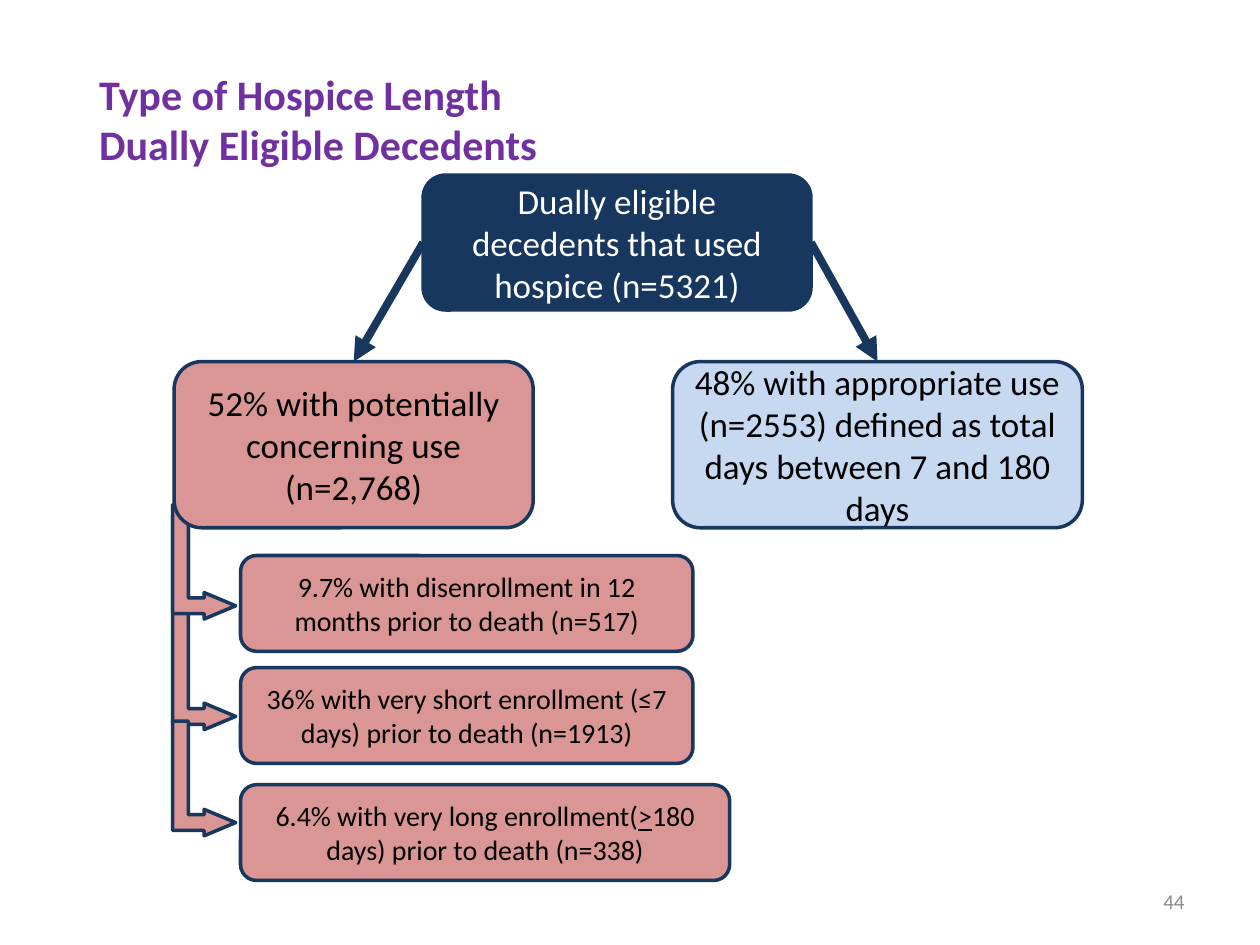
from lxml.etree import SubElement
from pptx import Presentation
from pptx.dml.color import RGBColor
from pptx.enum.shapes import MSO_CONNECTOR as Connector, MSO_SHAPE as Shape
from pptx.enum.text import MSO_ANCHOR as Anchor, PP_ALIGN as Align
from pptx.oxml.ns import qn
from pptx.util import Cm, Pt

NAVY = RGBColor(0x17, 0x37, 0x5E)
ROSE = RGBColor(0xD9, 0x96, 0x94)
SKY = RGBColor(0xC6, 0xD9, 0xF1)
PURPLE = RGBColor(0x70, 0x30, 0xA0)
GRAY = RGBColor(0x8C, 0x8C, 0x8C)
WHITE = RGBColor(0xFF, 0xFF, 0xFF)
BLACK = RGBColor(0, 0, 0)

TOP, LEFT, RIGHT = 0, 1, 3


class FlowSlide:
    font = "Calibri"
    outline = NAVY

    def __init__(self, page):
        self.page = page

    def span(self, para, text, size, color, bold=False, underline=False):
        span = para.add_run()
        span.text = text
        span.font.name = self.font
        span.font.size = Pt(size)
        span.font.color.rgb = color
        span.font.bold = bold
        span.font.underline = underline

    def text(self, left, top, width, height, lines, size, color, align, anchor, bold=False):
        box = self.page.shapes.add_textbox(Cm(left), Cm(top), Cm(width), Cm(height))
        frame = box.text_frame
        frame.word_wrap = True
        frame.vertical_anchor = anchor
        para = frame.paragraphs[0]
        para.alignment = align
        for index, line in enumerate(lines):
            if index:
                para.add_line_break()
            self.span(para, line, size, color, bold)

    def shape(self, kind, left, top, width, height, fill):
        shape = self.page.shapes.add_shape(kind, Cm(left), Cm(top), Cm(width), Cm(height))
        shape.shadow.inherit = False
        shape.fill.solid()
        shape.fill.fore_color.rgb = fill
        shape.line.color.rgb = self.outline
        shape.line.width = Pt(2)
        return shape

    def box(self, left, top, width, height, parts, size, fill=ROSE, color=BLACK):
        """Draw a rounded box; parts are (text, underline) pairs."""
        box = self.shape(Shape.ROUNDED_RECTANGLE, left, top, width, height, fill)
        frame = box.text_frame
        frame.word_wrap = True
        frame.vertical_anchor = Anchor.MIDDLE
        para = frame.paragraphs[0]
        para.alignment = Align.CENTER
        for text, underline in parts:
            self.span(para, text, size, color, underline=underline)
        return box

    def elbow(self, bottom, length, left=3.48, depth=1.27):
        """Draw a block arrow running down, then turning right."""
        # The frame is given before its quarter turn about the centre.
        arrow = self.shape(Shape.BENT_UP_ARROW, left + (depth - length) / 2,
                           bottom - (length + depth) / 2, length, depth, ROSE)
        arrow.rotation = 90
        for index, value in enumerate((0.25, 0.21, 0.5)):
            arrow.adjustments[index] = value

    def arrow(self, start, start_side, end, end_side):
        arrow = self.page.shapes.add_connector(Connector.STRAIGHT, 0, 0, 0, 0)
        arrow.begin_connect(start, start_side)
        arrow.end_connect(end, end_side)
        arrow.line.color.rgb = self.outline
        arrow.line.width = Pt(4.5)
        SubElement(arrow.line._get_or_add_ln(), qn("a:tailEnd"), type="triangle")
        SubElement(arrow._element.spPr, qn("a:effectLst"))


def main():
    deck = Presentation()
    deck.slide_width, deck.slide_height = Cm(25.4), Cm(19.05)
    slide = FlowSlide(deck.slides.add_slide(deck.slide_layouts[6]))

    slide.elbow(bottom=14.71, length=4.32)
    slide.elbow(bottom=12.48, length=2.31)
    slide.text(18.21, 17.65, 5.92, 1.02, ["44"], 12, GRAY, Align.RIGHT, Anchor.MIDDLE)

    hospice = slide.box(8.53, 3.53, 7.82, 2.72,
                        [("Dually eligible decedents that used hospice (n=5321)", False)],
                        20, NAVY, WHITE)
    appropriate = slide.box(
        13.56, 7.29, 8.26, 3.35,
        [("48% with appropriate use (n=2553) defined as total days between 7 and 180 days", False)],
        20, SKY)
    concerning = slide.box(3.51, 7.29, 7.24, 3.35,
                           [("52% with potentially concerning use (n=2,768)", False)], 20)
    slide.arrow(hospice, RIGHT, appropriate, TOP)
    slide.arrow(hospice, LEFT, concerning, TOP)

    reasons = [
        (11.2, 9.12, [("9.7% with disenrollment in 12 months prior to death (n=517)", False)]),
        (13.46, 9.12, [("36% with very short enrollment (≤7 days) prior to death (n=1913)", False)]),
        (15.82, 9.86, [("6.4% with very long enrollment(", False), (">", True),
                       ("180 days) prior to death (n=338)", False)]),
    ]
    for top, width, parts in reasons:
        slide.box(4.85, top, width, 1.93, parts, 16)
    slide.elbow(bottom=16.85, length=2.31)

    slide.text(1.75, 1.27, 21.62, 2.26, ["Type of Hospice Length", "Dually Eligible Decedents"],
               24, PURPLE, Align.LEFT, Anchor.BOTTOM, bold=True)
    deck.save("out.pptx")


if __name__ == "__main__":
    main()
